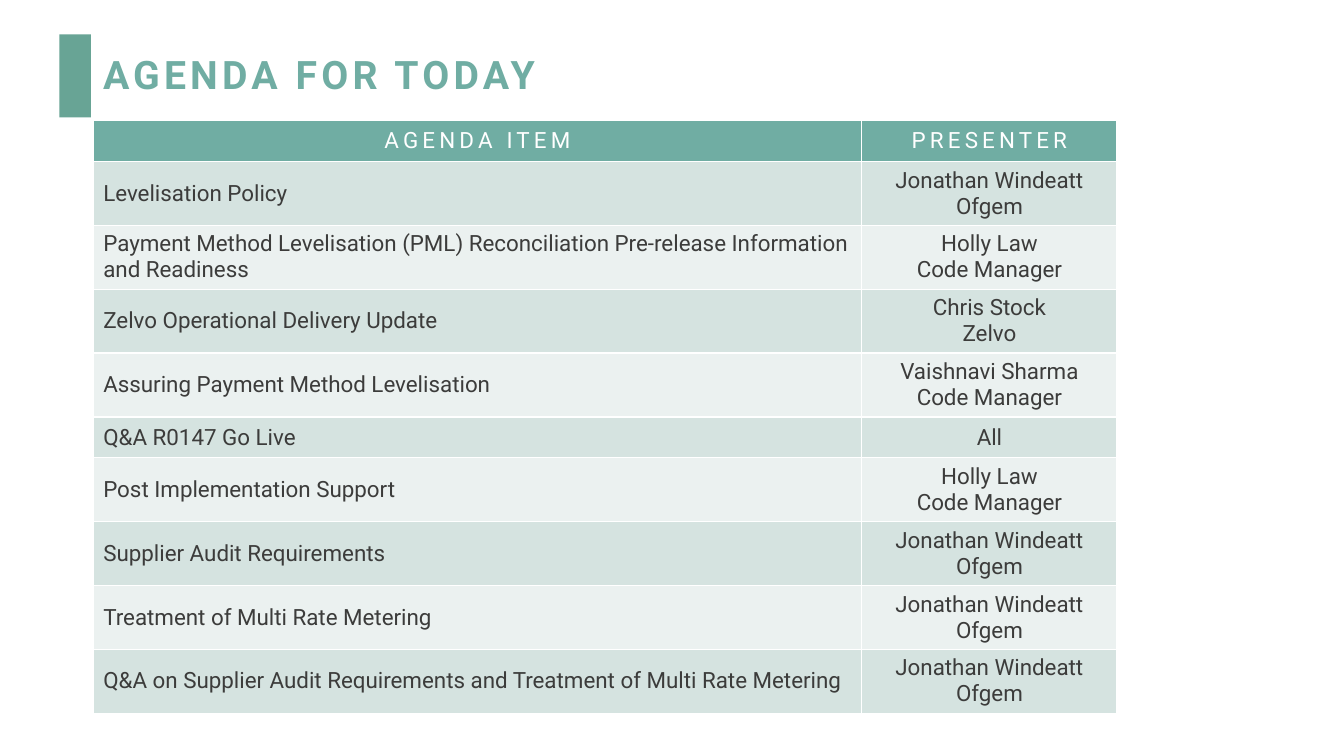
from dataclasses import dataclass

from lxml.etree import SubElement
from pptx import Presentation
from pptx.dml.color import RGBColor
from pptx.enum.shapes import MSO_SHAPE
from pptx.enum.text import MSO_ANCHOR, PP_ALIGN
from pptx.oxml.ns import qn
from pptx.util import Cm, Pt


@dataclass(frozen=True)
class Theme:
    font: str = "Roboto"
    marker: str = "68A495"
    accent: str = "70ADA3"
    band_dark: str = "D5E3E0"
    band_light: str = "EBF1F0"
    ink: str = "3C3C3B"
    white: str = "FFFFFF"
    title_size: int = 28
    table_size: int = 16
    tracking: int = 3
    border: int = 1


def write_text(frame, text, *, font, size, color, bold=False, tracking=0,
               align=PP_ALIGN.LEFT, line_spacing=1.0):
    for index, line in enumerate(text.split("\n")):
        paragraph = frame.paragraphs[0] if index == 0 else frame.add_paragraph()
        paragraph.alignment = align
        paragraph.line_spacing = line_spacing
        run = paragraph.add_run()
        run.text = line
        run.font.name = font
        run.font.size = Pt(size)
        run.font.bold = bold
        run.font.color.rgb = RGBColor.from_string(color)
        if tracking:
            run.font._element.set("spc", str(tracking * 100))


class SlideBuilder:
    def __init__(self, slide, theme):
        self.slide = slide
        self.theme = theme

    def marker(self, left, top, width, height):
        shape = self.slide.shapes.add_shape(
            MSO_SHAPE.RECTANGLE, Cm(left), Cm(top), Cm(width), Cm(height))
        shape.shadow.inherit = False
        shape.fill.solid()
        shape.fill.fore_color.rgb = RGBColor.from_string(self.theme.marker)
        shape.line.fill.background()

    def title(self, text, left, top, width, height):
        frame = self.slide.shapes.add_textbox(
            Cm(left), Cm(top), Cm(width), Cm(height)).text_frame
        frame.word_wrap = True
        frame.vertical_anchor = MSO_ANCHOR.MIDDLE
        write_text(frame, text, font=self.theme.font, size=self.theme.title_size,
                   color=self.theme.accent, bold=True,
                   tracking=self.theme.tracking, line_spacing=0.9)

    def cell(self, cell, text, fill, **text_format):
        properties = cell._tc.get_or_add_tcPr()
        for side in ("L", "R", "T", "B"):
            border = SubElement(properties, qn(f"a:ln{side}"),
                                w=str(Pt(self.theme.border)))
            solid = SubElement(border, qn("a:solidFill"))
            SubElement(solid, qn("a:srgbClr"), val=self.theme.white)
        cell.fill.solid()
        cell.fill.fore_color.rgb = RGBColor.from_string(fill)
        cell.vertical_anchor = MSO_ANCHOR.MIDDLE
        write_text(cell.text_frame, text, font=self.theme.font,
                   size=self.theme.table_size, **text_format)

    def table(self, headings, rows, left, top, widths, row_height):
        count = len(rows) + 1
        table = self.slide.shapes.add_table(
            count, len(headings), Cm(left), Cm(top),
            Cm(sum(widths)), Cm(row_height * count)).table
        for column, width in zip(table.columns, widths):
            column.width = Cm(width)
        for row in table.rows:
            row.height = Cm(row_height)
        for column, heading in enumerate(headings):
            self.cell(table.cell(0, column), heading, self.theme.accent,
                      color=self.theme.white, tracking=self.theme.tracking,
                      align=PP_ALIGN.CENTER)
        for number, values in enumerate(rows, start=1):
            fill = self.theme.band_dark if number % 2 else self.theme.band_light
            for column, value in enumerate(values):
                align = PP_ALIGN.CENTER if column else PP_ALIGN.LEFT
                self.cell(table.cell(number, column), value, fill,
                          color=self.theme.ink, align=align)


REGULATOR = "Jonathan Windeatt Ofgem"
CODE_MANAGER = "Holly Law\nCode Manager"
AGENDA = [
    ("Levelisation Policy", REGULATOR),
    ("Payment Method Levelisation (PML) Reconciliation Pre-release Information "
     "and Readiness", CODE_MANAGER),
    ("Zelvo Operational Delivery Update", "Chris Stock\nZelvo"),
    ("Assuring Payment Method Levelisation", "Vaishnavi Sharma\nCode Manager"),
    ("Q&A R0147 Go Live", "All"),
    ("Post Implementation Support", CODE_MANAGER),
    ("Supplier Audit Requirements", REGULATOR),
    ("Treatment of Multi Rate Metering", REGULATOR),
    ("Q&A on Supplier Audit Requirements and Treatment of Multi Rate Metering",
     REGULATOR),
]


def main():
    presentation = Presentation()
    presentation.slide_width = Cm(33.87)
    presentation.slide_height = Cm(19.05)
    slide = presentation.slides.add_slide(presentation.slide_layouts[6])
    builder = SlideBuilder(slide, Theme())
    builder.marker(1.5, 0.87, 0.79, 2.09)
    builder.title("AGENDA FOR TODAY", 2.35, 1.01, 25.78, 1.83)
    builder.table(("AGENDA ITEM", "PRESENTER"), AGENDA, 2.35, 3.04,
                  (19.37, 6.43), 1.03)
    presentation.save("out.pptx")


if __name__ == "__main__":
    main()
